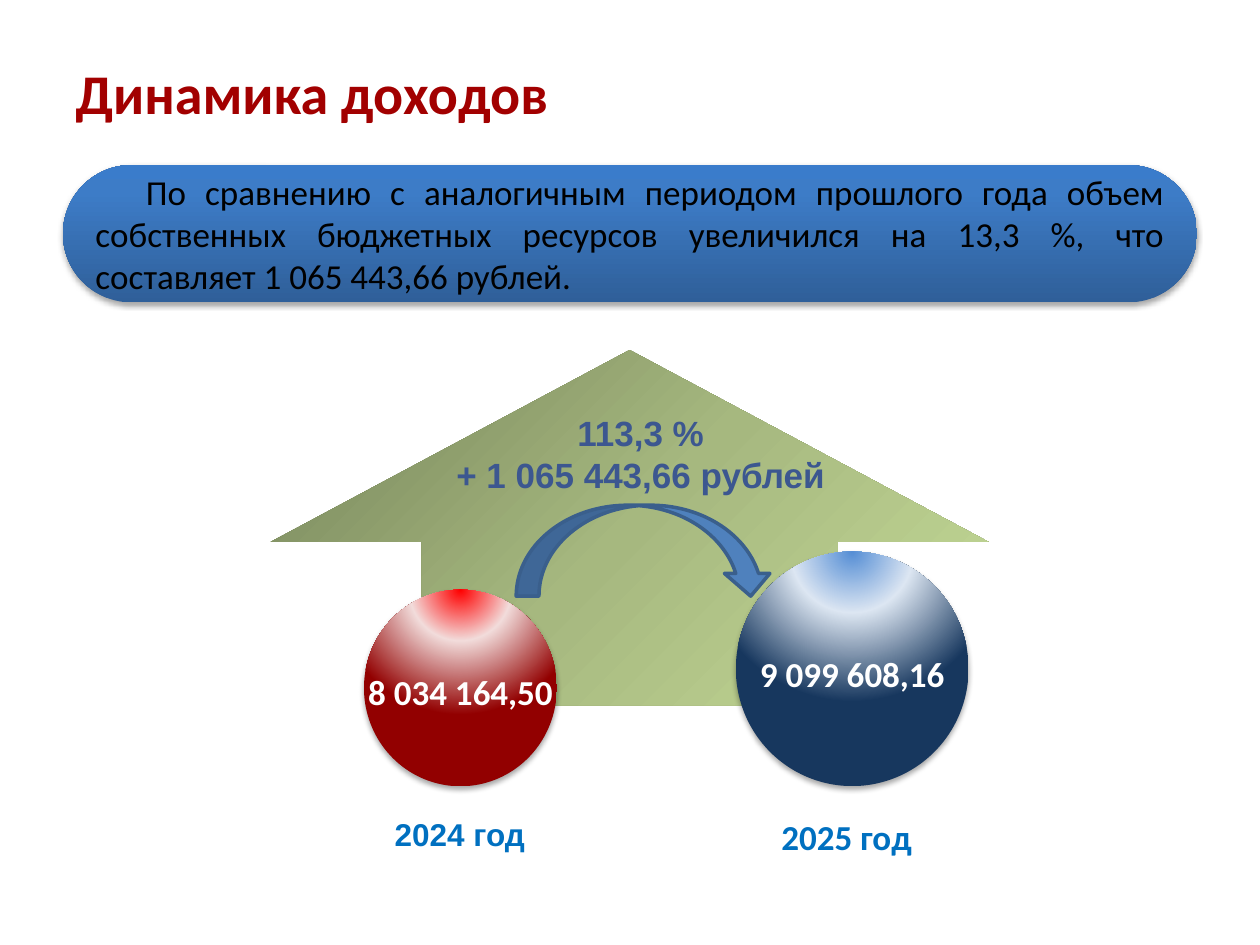
"""Build the slide on income dynamics for 2024 and 2025."""
from dataclasses import dataclass
from typing import Optional

from lxml.etree import SubElement
from pptx import Presentation
from pptx.dml.color import RGBColor
from pptx.enum.shapes import MSO_SHAPE
from pptx.enum.text import MSO_ANCHOR, PP_ALIGN
from pptx.oxml.ns import qn
from pptx.util import Pt

BLACK = RGBColor(0x00, 0x00, 0x00)
WHITE = RGBColor(0xFF, 0xFF, 0xFF)
DARK_RED = RGBColor(0xA2, 0x00, 0x00)
YEAR_BLUE = RGBColor(0x00, 0x70, 0xC0)
GROWTH_BLUE = RGBColor(0x3C, 0x57, 0x90)
SWEEP_FILL = RGBColor(0x4F, 0x81, 0xBD)
SWEEP_LINE = RGBColor(0x3A, 0x5F, 0x8C)
RED = RGBColor(0xFF, 0x00, 0x00)
PINK = RGBColor(0xF2, 0xDC, 0xDB)
DEEP_RED = RGBColor(0x92, 0x00, 0x00)
SKY = RGBColor(0x55, 0x8E, 0xD5)
PALE_BLUE = RGBColor(0xDC, 0xE6, 0xF2)
NAVY = RGBColor(0x17, 0x37, 0x5E)
OLIVE = RGBColor(0x74, 0x82, 0x59)
SAGE = RGBColor(0xA6, 0xB8, 0x7F)
LIME = RGBColor(0xC5, 0xDB, 0x97)
BANNER_DARK = RGBColor(0x2F, 0x5F, 0x99)
BANNER_MID = RGBColor(0x3D, 0x7C, 0xC7)
BANNER_LIGHT = RGBColor(0x3A, 0x7C, 0xCB)


@dataclass(frozen=True)
class Box:
    left: float
    top: float
    width: float
    height: float

    def lengths(self) -> tuple:
        return Pt(self.left), Pt(self.top), Pt(self.width), Pt(self.height)


@dataclass(frozen=True)
class Gradient:
    stops: tuple
    angle: Optional[int] = None


@dataclass(frozen=True)
class Label:
    lines: tuple
    box: Box
    color: RGBColor
    font: str = "Calibri"
    size: int = 20


@dataclass(frozen=True)
class Income:
    ball: Box
    gradient: Gradient
    amount: Label
    year: Label


INCOMES = (
    Income(
        Box(208, 337, 110.2, 112.3),
        Gradient(((0, RED), (37, PINK), (91, DEEP_RED))),
        Label(("8 034 164,50",), Box(201, 379.5, 124.5, 31.5), WHITE),
        Label(("2024 год",), Box(214.5, 462.3, 96.5, 51), YEAR_BLUE, "Arial", 18),
    ),
    Income(
        Box(420.5, 315.2, 133, 134),
        Gradient(((0, SKY), (37, PALE_BLUE), (91, NAVY))),
        Label(("9 099 608,16",), Box(427, 369.5, 120.2, 31.5), WHITE),
        Label(("2025 год",), Box(439.2, 462.3, 89.3, 31.5), YEAR_BLUE),
    ),
)
GROWTH = Label(("113,3 %", "+ 1 065 443,66 рублей"),
               Box(252.7, 231.8, 226.8, 77.8), GROWTH_BLUE, "Arial")


def add_run(paragraph, text: str, color: RGBColor, font: str, size: int, bold: bool) -> None:
    run = paragraph.add_run()
    run.text = text
    run.font.name = font
    run.font.size = Pt(size)
    run.font.bold = bold
    run.font.color.rgb = color


def add_plain_shape(slide, kind: MSO_SHAPE, box: Box):
    shape = slide.shapes.add_shape(kind, *box.lengths())
    shape.shadow.inherit = False
    shape.line.fill.background()
    return shape


def apply_gradient(shape, gradient: Gradient) -> None:
    shape.fill.background()
    properties = shape.element.spPr
    blank = properties.find(qn("a:noFill"))
    fill = SubElement(properties, qn("a:gradFill"), rotWithShape="1")
    properties.replace(blank, fill)
    stops = SubElement(fill, qn("a:gsLst"))
    for position, color in gradient.stops:
        stop = SubElement(stops, qn("a:gs"), pos=str(position * 1000))
        SubElement(stop, qn("a:srgbClr"), val=str(color))
    if gradient.angle is None:
        circle = SubElement(fill, qn("a:path"), path="circle")
        SubElement(circle, qn("a:fillToRect"), l="50000", r="50000", b="100000")
    else:
        SubElement(fill, qn("a:lin"), ang=str(gradient.angle * 60000), scaled="0")


def cast_shadow(shape) -> None:
    effects = shape.element.spPr.find(qn("a:effectLst"))
    shadow = SubElement(effects, qn("a:outerShdw"), blurRad=str(Pt(3.1)),
                        dist=str(Pt(1.8)), dir="5400000", rotWithShape="0")
    color = SubElement(shadow, qn("a:srgbClr"), val=str(BLACK))
    SubElement(color, qn("a:alpha"), val="35000")


def add_label(slide, label: Label) -> None:
    frame = slide.shapes.add_textbox(*label.box.lengths()).text_frame
    frame.word_wrap = False
    for index, line in enumerate(label.lines):
        paragraph = frame.add_paragraph() if index else frame.paragraphs[0]
        paragraph.alignment = PP_ALIGN.CENTER
        add_run(paragraph, line, label.color, label.font, label.size, True)


def add_title(slide) -> None:
    title = slide.shapes.title
    title.left, title.top, title.width, title.height = Box(36, 21.6, 648, 62.6).lengths()
    title.text_frame.vertical_anchor = MSO_ANCHOR.MIDDLE
    heading = title.text_frame.paragraphs[0]
    heading.alignment = PP_ALIGN.LEFT
    add_run(heading, "Динамика доходов", DARK_RED, "Calibri", 32, True)


def add_growth_arrow(slide) -> None:
    arrow = add_plain_shape(slide, MSO_SHAPE.UP_ARROW, Box(154.8, 200, 410, 203))
    arrow.adjustments[0] = 0.58
    arrow.adjustments[1] = 0.54
    apply_gradient(arrow, Gradient(((0, OLIVE), (50, SAGE), (100, LIME)), 45))


def add_banner(slide) -> None:
    banner = add_plain_shape(slide, MSO_SHAPE.ROUNDED_RECTANGLE, Box(36, 94.3, 648, 78.5))
    banner.adjustments[0] = 0.5
    apply_gradient(banner, Gradient(
        ((0, BANNER_DARK), (80, BANNER_MID), (100, BANNER_LIGHT)), 270))
    cast_shadow(banner)
    banner.text_frame.word_wrap = True
    banner.text_frame.vertical_anchor = MSO_ANCHOR.MIDDLE
    summary = banner.text_frame.paragraphs[0]
    summary.alignment = PP_ALIGN.JUSTIFY
    summary_properties = summary._p.get_or_add_pPr()
    summary_properties.set("marL", "0")
    summary_properties.set("indent", str(Pt(28.8)))
    add_run(summary, "По сравнению с аналогичным периодом прошлого года объем собственных "
            "бюджетных ресурсов увеличился на 13,3 %, что составляет 1 065 443,66 рублей.",
            BLACK, "Calibri", 20, False)


def add_income(slide, income: Income) -> None:
    ball = add_plain_shape(slide, MSO_SHAPE.OVAL, income.ball)
    apply_gradient(ball, income.gradient)
    cast_shadow(ball)
    add_label(slide, income.amount)
    add_label(slide, income.year)


def add_sweep(slide) -> None:
    sweep = add_plain_shape(slide, MSO_SHAPE.CURVED_DOWN_ARROW, Box(295, 288.7, 147, 52))
    sweep.fill.solid()
    sweep.fill.fore_color.rgb = SWEEP_FILL
    sweep.line.color.rgb = SWEEP_LINE
    sweep.line.width = Pt(2)


def main() -> None:
    presentation = Presentation()
    presentation.slide_width, presentation.slide_height = Pt(720), Pt(540)
    slide = presentation.slides.add_slide(presentation.slide_layouts[5])
    add_title(slide)
    add_growth_arrow(slide)
    add_banner(slide)
    for income in INCOMES:
        add_income(slide, income)
    add_sweep(slide)
    add_label(slide, GROWTH)
    presentation.save("out.pptx")


if __name__ == "__main__":
    main()
